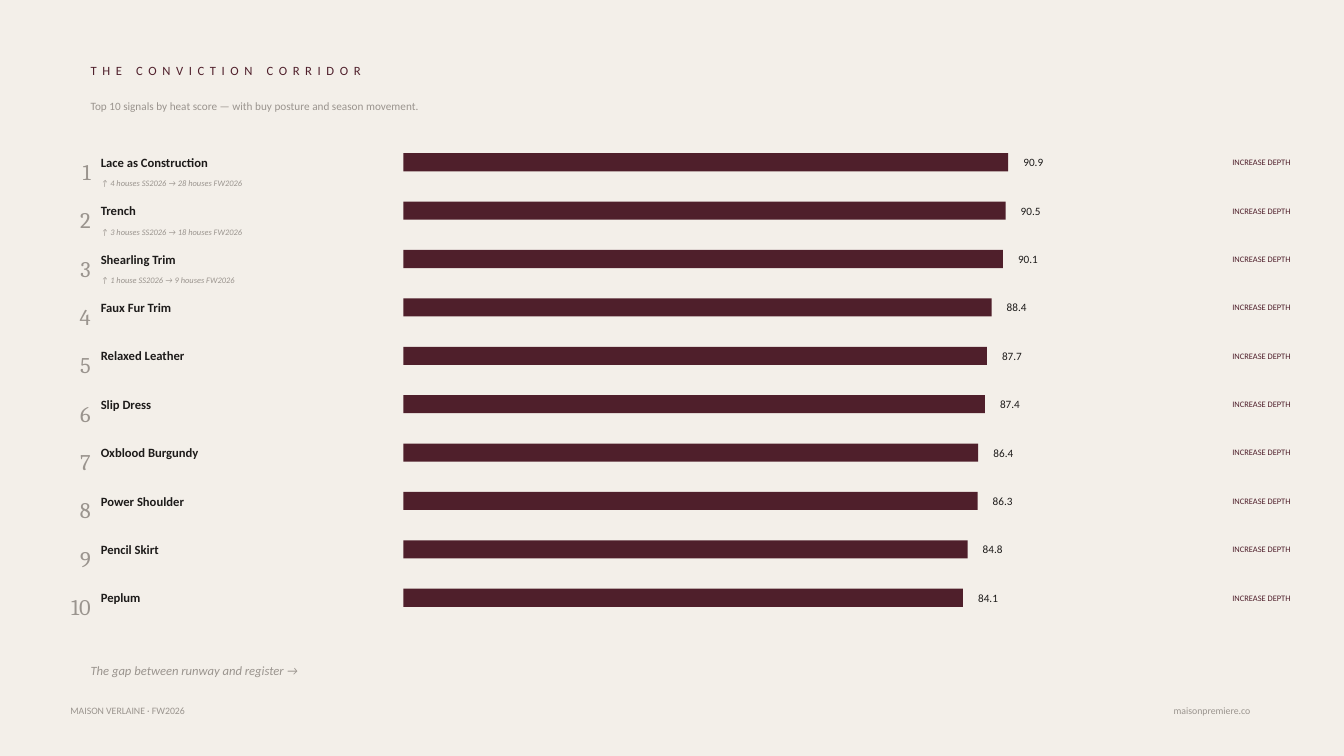
import pptx
import pptx.dml.color
import pptx.enum.shapes
import pptx.enum.text
import pptx.util

Inches = pptx.util.Inches
Align = pptx.enum.text.PP_ALIGN
COLORS = {"paper": "F3EFE9", "wine": "4F1F2B", "gray": "9A948E", "ink": "1D1B1A"}

deck = pptx.Presentation()
deck.slide_width, deck.slide_height = Inches(13.33), Inches(7.5)
slide = deck.slides.add_slide(deck.slide_layouts[5])


def rgb(name):
    return pptx.dml.color.RGBColor.from_string(COLORS[name])


def write(text, left, top, width, height, size, color, align=Align.LEFT,
          pad=0.0, face="Calibri", bold=False, italic=False, box=None):
    """Put one line of text in box, or in a new text box; pad is the side inset."""
    if box is None:
        box = slide.shapes.add_textbox(0, 0, 0, 0)
    box.left, box.top = Inches(left), Inches(top)
    box.width, box.height = Inches(width), Inches(height)
    frame = box.text_frame
    frame.text = text
    frame.word_wrap = True
    frame.auto_size = pptx.enum.text.MSO_AUTO_SIZE.NONE
    frame.vertical_anchor = pptx.enum.text.MSO_ANCHOR.MIDDLE
    frame.margin_left = frame.margin_right = Inches(pad)
    frame.margin_top = frame.margin_bottom = Inches(pad / 2)
    line = frame.paragraphs[0]
    line.alignment = align
    font = line.runs[0].font
    font.name, font.size = face, pptx.util.Pt(size)
    font.bold, font.italic = bold, italic
    font.color.rgb = rgb(color)


slide.background.fill.solid()
slide.background.fill.fore_color.rgb = rgb("paper")

# Heading
title = slide.shapes.title
write("THE CONVICTION CORRIDOR", 0.8, 0.5, 8, 0.4, 9, "wine", pad=0.1, box=title)
run = title.text_frame.paragraphs[0].runs[0]
run._r.get_or_add_rPr().set("spc", "400")
write("Top 10 signals by heat score — with buy posture and season movement.",
      0.8, 0.9, 10, 0.3, 8, "gray", pad=0.1)

# Ranked signals: name, heat score, season movement
SIGNALS = [
    ("Lace as Construction", 90.9, "↑ 4 houses SS2026 → 28 houses FW2026"),
    ("Trench", 90.5, "↑ 3 houses SS2026 → 18 houses FW2026"),
    ("Shearling Trim", 90.1, "↑ 1 house SS2026 → 9 houses FW2026"),
    ("Faux Fur Trim", 88.4, ""),
    ("Relaxed Leather", 87.7, ""),
    ("Slip Dress", 87.4, ""),
    ("Oxblood Burgundy", 86.4, ""),
    ("Power Shoulder", 86.3, ""),
    ("Pencil Skirt", 84.8, ""),
    ("Peplum", 84.1, ""),
]
START, PITCH = 1.5, 0.48
BAR_LEFT, BAR_MAX = 4, 6
best = max(score for _, score, _ in SIGNALS)

for rank, (name, score, move) in enumerate(SIGNALS, 1):
    top = START + (rank - 1) * PITCH
    width = BAR_MAX * score / best
    write(str(rank), 0.5, top, 0.4, 0.4, 16, "gray", Align.RIGHT, face="Cambria")
    write(name, 1, top, 2.8, 0.22, 9, "ink", bold=True)
    bar = slide.shapes.add_shape(
        pptx.enum.shapes.MSO_SHAPE.RECTANGLE,
        Inches(BAR_LEFT), Inches(top + 0.02), Inches(width), Inches(0.18))
    bar.shadow.inherit = False
    bar.fill.solid()
    bar.fill.fore_color.rgb = rgb("wine")
    bar.line.fill.background()
    write(str(score), BAR_LEFT + width + 0.15, top, 0.8, 0.22, 8, "ink")
    write("INCREASE DEPTH", 11, top, 1.8, 0.22, 6, "wine", Align.RIGHT)
    if move:
        write(move, 1, top + 0.22, 3, 0.2, 6, "gray", italic=True)

# Closing line and footer
write("The gap between runway and register →", 0.8, 6.5, 10, 0.3, 9, "gray",
      pad=0.1, italic=True)
write("MAISON VERLAINE · FW2026", 0.6, 6.9, 5, 0.3, 7, "gray", pad=0.1)
write("maisonpremiere.co", 7.5, 6.9, 5, 0.3, 7, "gray", Align.RIGHT, pad=0.1)

deck.save("out.pptx")
